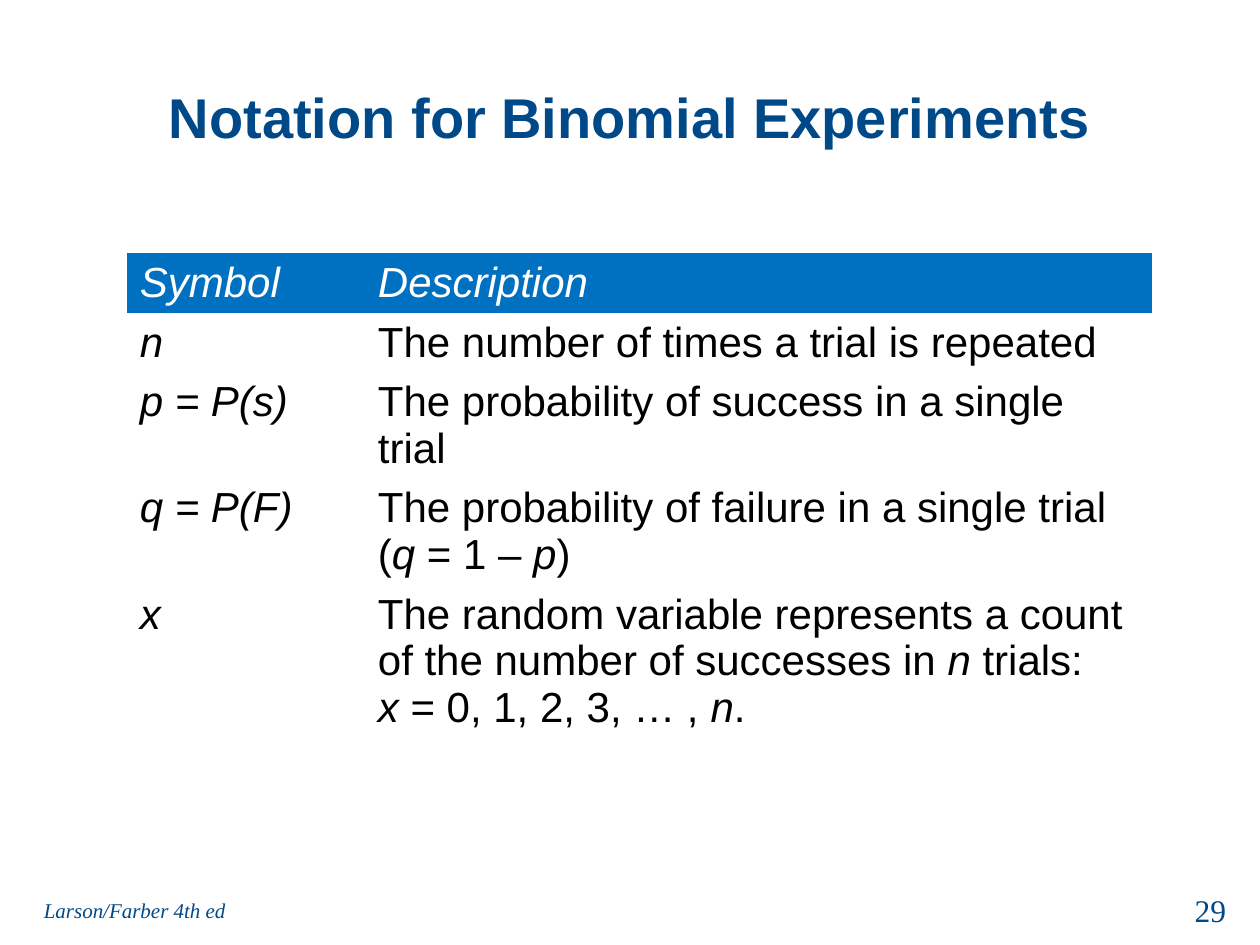
from pptx import Presentation
from pptx.dml.color import RGBColor
from pptx.enum.text import MSO_ANCHOR as ANCHOR, PP_ALIGN as ALIGN
from pptx.oxml.ns import qn
from pptx.util import Inches, Pt

NAVY = RGBColor(0x00, 0x49, 0x88)
BLUE = RGBColor(0x00, 0x70, 0xC0)
WHITE = RGBColor(0xFF, 0xFF, 0xFF)
BLACK = RGBColor(0x00, 0x00, 0x00)
PLAIN_TABLE = "{2D5ABB26-0587-4C30-8999-92F81FD0307C}"  # no style, no grid


def write(tf, text, size, color, font="Arial", bold=False, align=ALIGN.LEFT,
          anchor=ANCHOR.TOP):
    """Fill a text frame; asterisks switch italics, newlines break the line."""
    tf.word_wrap = True
    tf.vertical_anchor = anchor
    p = tf.paragraphs[0]
    p.alignment = align
    for i, part in enumerate(text.split("*")):
        for j, line in enumerate(part.split("\n")):
            if j:
                p.add_line_break()
            if line:
                r = p.add_run()
                r.text = line
                r.font.name, r.font.size = font, Pt(size)
                r.font.bold, r.font.italic = bold, i % 2 == 1
                r.font.color.rgb = color


prs = Presentation()
prs.slide_width, prs.slide_height = Inches(10), Inches(7.5)
s = prs.slides.add_slide(prs.slide_layouts[5])

# Title
title = s.shapes.title
title.left, title.top = Inches(0.5), Inches(0.3)
title.width, title.height = Inches(9), Inches(1.25)
write(title.text_frame, "Notation for Binomial Experiments", 32, NAVY,
      bold=True, align=ALIGN.CENTER, anchor=ANCHOR.MIDDLE)

# Notation table
rows = [
    ("*Symbol*", "*Description*"),
    ("*n*", "The number of times a trial is repeated"),
    ("*p = P(s)*", "The probability of success in a single trial"),
    ("*q = P(F)*", "The probability of failure in a single trial\n(*q* = 1 – *p*)"),
    ("*x*", "The random variable represents a count of the number of "
            "successes in *n* trials:\n*x* = 0, 1, 2, 3, … , *n*."),
]
table = s.shapes.add_table(len(rows), 2, Inches(1.01), Inches(2.01),
                           Inches(8.13), Inches(0.41 * len(rows))).table
table._tbl.tblPr.find(qn("a:tableStyleId")).text = PLAIN_TABLE
table.horz_banding = False
for column, width in zip(table.columns, (1.69, 6.44)):
    column.width = Inches(width)
for i, row in enumerate(rows):
    for j, text in enumerate(row):
        cell = table.cell(i, j)
        cell.margin_left = Inches(0.3 if j else 0.1)
        if i == 0:
            cell.fill.solid()
            cell.fill.fore_color.rgb = BLUE
        else:
            cell.fill.background()
        write(cell.text_frame, text, 24, BLACK if i else WHITE)

# Footer and slide number
footers = [
    ("*Larson/Farber 4th ed*", 0.25, 3.17, 12, ALIGN.LEFT, ANCHOR.MIDDLE),
    ("29", 7.5, 2.33, 18, ALIGN.RIGHT, ANCHOR.TOP),
]
for text, left, width, size, align, anchor in footers:
    box = s.shapes.add_textbox(Inches(left), Inches(7.02), Inches(width), Inches(0.4))
    write(box.text_frame, text, size, NAVY, font="Times New Roman",
          align=align, anchor=anchor)

prs.save("out.pptx")
